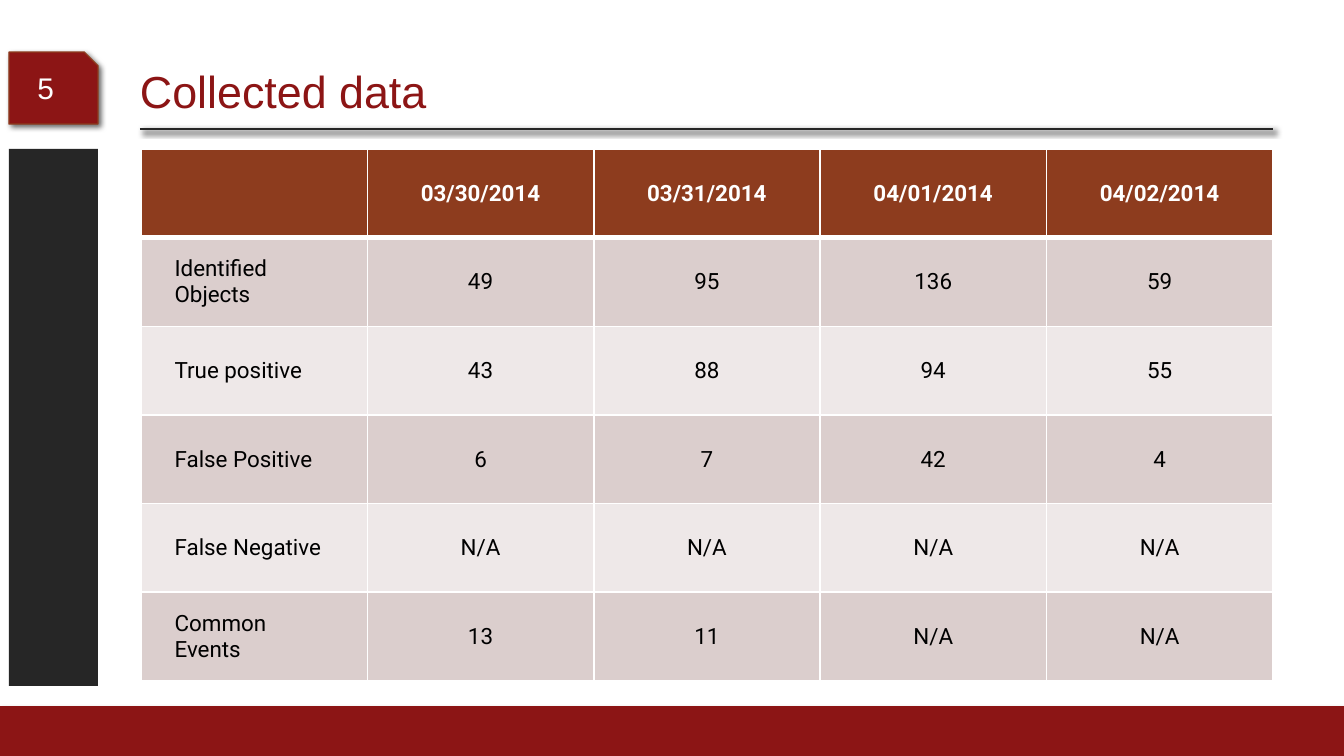
import pptx
import pptx.util
import pptx.oxml
import pptx.oxml.ns
from pptx.dml.color import RGBColor
from pptx.enum.shapes import MSO_CONNECTOR, MSO_SHAPE
from pptx.enum.text import MSO_ANCHOR, PP_ALIGN

SCALE = 914400 / 134.4
RED = RGBColor(0x8C, 0x15, 0x15)
RUST = RGBColor(0x8D, 0x3C, 0x1E)
DARK = RGBColor(0x26, 0x26, 0x26)
GRAY = RGBColor(0x80, 0x80, 0x80)
BLACK = RGBColor(0, 0, 0)
WHITE = RGBColor(0xFF, 0xFF, 0xFF)
ROSE = RGBColor(0xDB, 0xCE, 0xCD)
PALE = RGBColor(0xEE, 0xE8, 0xE8)

ROWS = [
    ["", "03/30/2014", "03/31/2014", "04/01/2014", "04/02/2014"],
    ["Identified Objects", "49", "95", "136", "59"],
    ["True positive", "43", "88", "94", "55"],
    ["False Positive", "6", "7", "42", "4"],
    ["False Negative", "N/A", "N/A", "N/A", "N/A"],
    ["Common Events", "13", "11", "N/A", "N/A"],
]


def px(*nums):
    sizes = [pptx.util.Emu(round(num * SCALE)) for num in nums]
    return sizes if len(sizes) > 1 else sizes[0]


def add_xml(parent, text):
    space = pptx.oxml.ns.nsdecls("a")
    parent.append(pptx.oxml.parse_xml(text.replace(" ", f" {space} ", 1)))


def add_shadow(shape, color):
    pr = shape._element.spPr
    for old in pr.findall(pptx.oxml.ns.qn("a:effectLst")):
        pr.remove(old)
    add_xml(pr, '<a:effectLst ><a:outerShdw blurRad="38100" dist="25400" '
                'dir="2700000" algn="ctr" rotWithShape="0">'
                f'<a:srgbClr val="{color}"><a:alpha val="60000"/></a:srgbClr>'
                '</a:outerShdw></a:effectLst>')


def add_block(slide, kind, box, fill, line=None, shade=None):
    shape = slide.shapes.add_shape(kind, *px(*box))
    shape.shadow.inherit = False
    shape.fill.solid()
    shape.fill.fore_color.rgb = fill
    if line is None:
        shape.line.fill.background()
    else:
        shape.line.color.rgb = line
        shape.line.width = pptx.util.Pt(0.75)
    if shade is not None:
        add_shadow(shape, shade)
    return shape


def add_rule(slide, left, right, top):
    rule = slide.shapes.add_connector(
        MSO_CONNECTOR.STRAIGHT, *px(left, top, right, top))
    rule.line.color.rgb = DARK
    rule.line.width = pptx.util.Pt(1.25)
    add_shadow(rule, BLACK)


def set_font(para, name, size, color, bold=False):
    font = para.font
    font.name = name
    font.size = pptx.util.Pt(size)
    font.color.rgb = color
    font.bold = bold


def add_text(slide, box, text, size, color, anchor):
    frame = slide.shapes.add_textbox(*px(*box)).text_frame
    frame.word_wrap = True
    frame.vertical_anchor = anchor
    para = frame.paragraphs[0]
    para.text = text
    set_font(para, "Arial", size, color)
    return frame


def add_edges(cell, top, base):
    props = cell._tc.get_or_add_tcPr()
    for side, width in zip("LRTB", (1, 1, top, base)):
        add_xml(props, f'<a:ln{side} w="{pptx.util.Pt(width)}"><a:solidFill>'
                       f'<a:srgbClr val="{WHITE}"/></a:solidFill></a:ln{side}>')


def fill_cell(cell, text, row, col):
    head = row == 0
    add_edges(cell, 3 if row == 1 else 1, 3 if head else 1)
    cell.fill.solid()
    cell.fill.fore_color.rgb = RUST if head else ROSE if row % 2 else PALE
    cell.vertical_anchor = MSO_ANCHOR.MIDDLE
    cell.margin_left = cell.margin_right = pptx.util.Inches(0.25)
    cell.margin_top = cell.margin_bottom = pptx.util.Inches(0.13)
    para = cell.text_frame.paragraphs[0]
    para.text = text
    para.alignment = PP_ALIGN.CENTER if col else PP_ALIGN.LEFT
    set_font(para, "Roboto", 12, WHITE if head else BLACK, head)


def add_grid(slide, box, rows):
    frame = slide.shapes.add_table(len(rows), len(rows[0]), *px(*box))
    for r, row in enumerate(rows):
        for c, text in enumerate(row):
            fill_cell(frame.table.cell(r, c), text, r, c)


def main():
    deck = pptx.Presentation()
    deck.slide_width, deck.slide_height = px(1344, 756)
    slide = deck.slides.add_slide(deck.slide_layouts[6])
    add_block(slide, MSO_SHAPE.RECTANGLE, (0, 707, 1345, 51), RED, RED, GRAY)
    add_rule(slide, 140, 1273, 129)
    tab = add_block(slide, MSO_SHAPE.SNIP_1_RECTANGLE, (9, 52, 89, 72),
                    RED, RUST, BLACK)
    tab.adjustments[0] = 0.19
    add_block(slide, MSO_SHAPE.RECTANGLE, (9, 149, 89, 537), DARK)
    title = add_text(slide, (140, 52, 1133, 72), "Collected data", 24, RED,
                     MSO_ANCHOR.BOTTOM)
    title.margin_left = 0
    title.paragraphs[0].line_spacing = 0.85
    add_grid(slide, (141, 149, 1132, 532), ROWS)
    add_text(slide, (24, 61, 74, 53), "5", 16, WHITE, MSO_ANCHOR.MIDDLE)
    deck.save("out.pptx")


if __name__ == "__main__":
    main()
